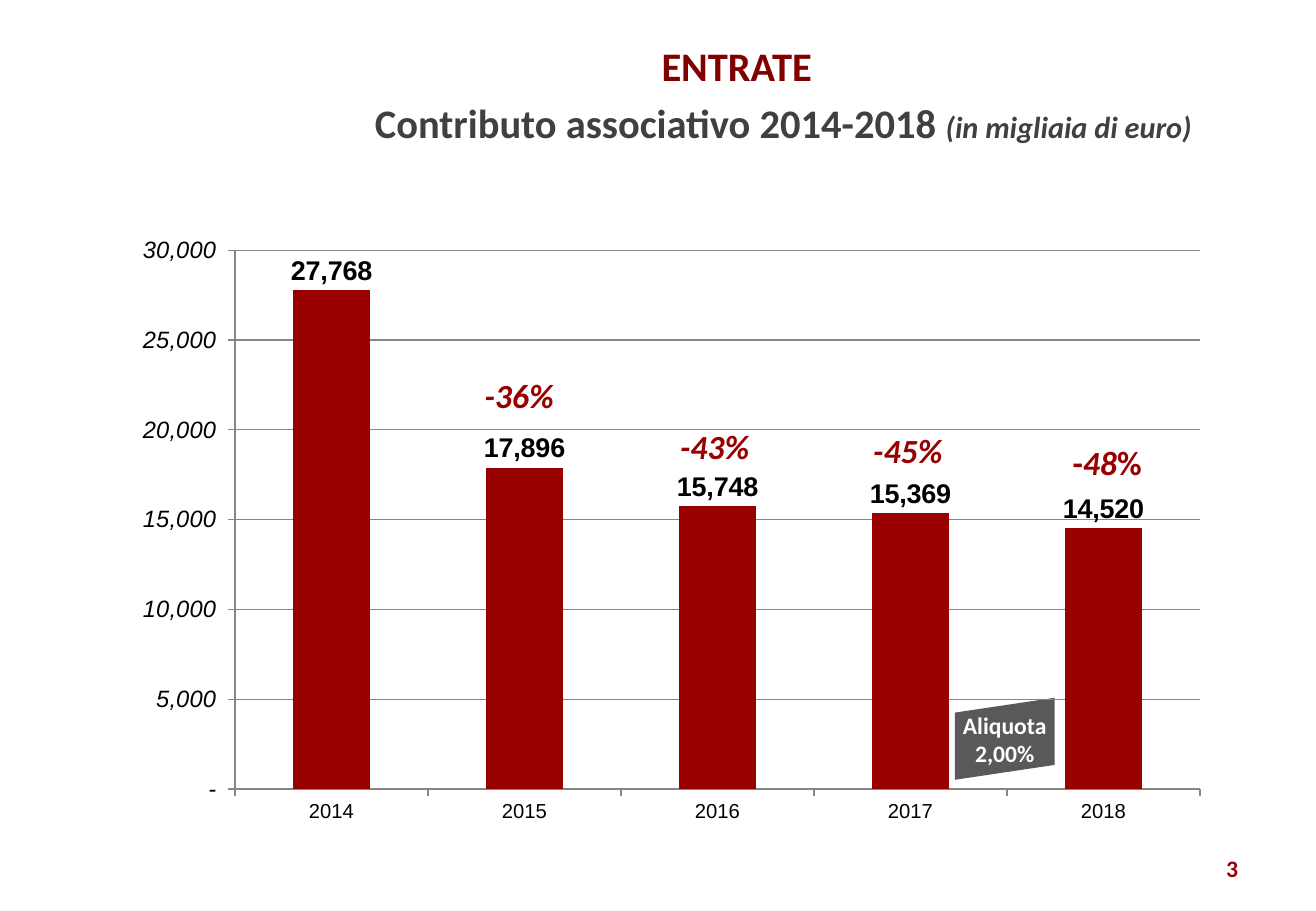
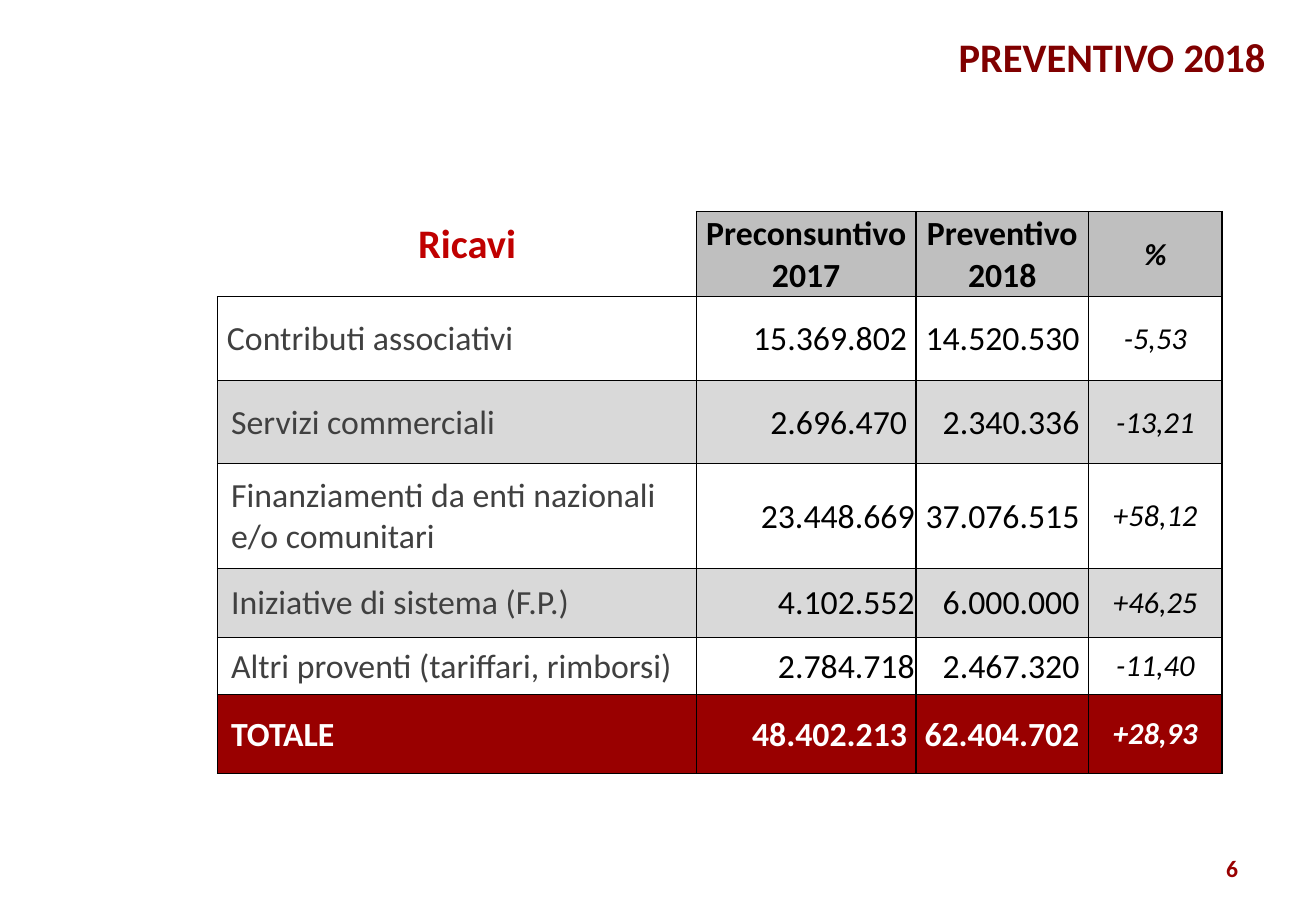
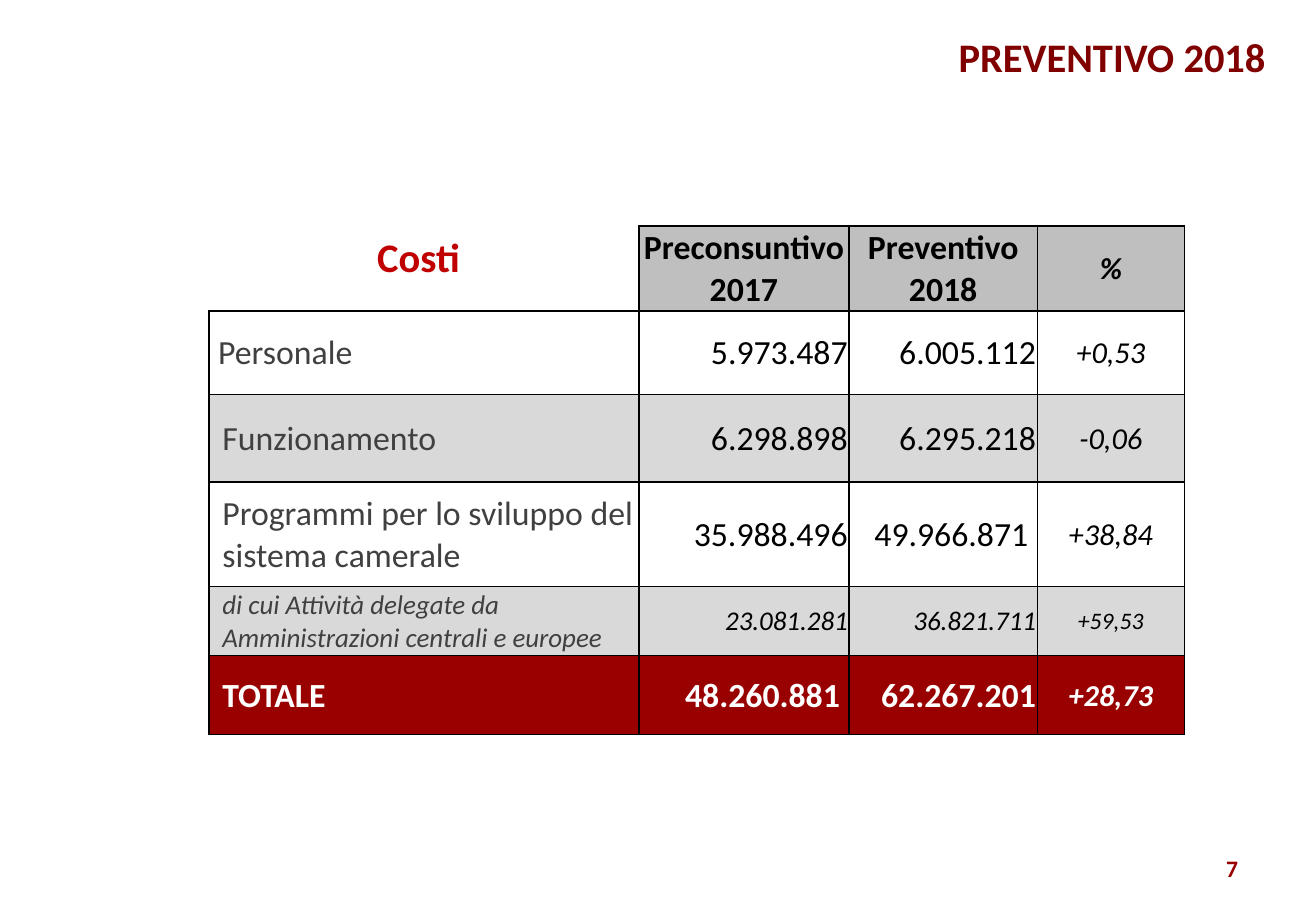
from lxml import etree
from pptx import Presentation
from pptx.chart import data as cd
from pptx.dml.color import RGBColor
from pptx.enum import chart as ch, text as tx
from pptx.oxml import ns
from pptx.util import Pt

DARK_RED = RGBColor(0x80, 0x00, 0x00)
RED = RGBColor(0x99, 0x00, 0x00)
BRIGHT_RED = RGBColor(0xC0, 0x00, 0x00)
BLACK = RGBColor(0x00, 0x00, 0x00)
WHITE = RGBColor(0xFF, 0xFF, 0xFF)
TEXT_GREY = RGBColor(0x40, 0x40, 0x40)
BADGE_GREY = RGBColor(0x59, 0x59, 0x59)
GRID_GREY = RGBColor(0x86, 0x86, 0x86)
HEAD_GREY = RGBColor(0xBF, 0xBF, 0xBF)
BAND_GREY = RGBColor(0xD9, 0xD9, 0xD9)

LEFT, CENTER, RIGHT = tx.PP_ALIGN.LEFT, tx.PP_ALIGN.CENTER, tx.PP_ALIGN.RIGHT
HEADS = ("", "Preconsuntivo 2017", "Preventivo 2018", "%")

REVENUE = [
    ("Contributi associativi", "15.369.802 ", "14.520.530 ", "-5,53"),
    ("Servizi commerciali", "2.696.470 ", "2.340.336 ", "-13,21"),
    ("Finanziamenti da enti nazionali e/o comunitari",
     "23.448.669", "37.076.515 ", "+58,12"),
    ("Iniziative di sistema (F.P.)", "4.102.552", "6.000.000 ", "+46,25"),
    ("Altri proventi (tariffari, rimborsi)",
     "2.784.718", "2.467.320 ", "-11,40"),
    ("TOTALE", "48.402.213 ", "62.404.702 ", "+28,93"),
]
COSTS = [
    ("Personale", "5.973.487", "6.005.112", "+0,53"),
    ("Funzionamento", "6.298.898", "6.295.218", "-0,06"),
    ("Programmi per lo sviluppo del sistema camerale",
     "35.988.496", "49.966.871 ", "+38,84"),
    ("di cui Attività delegate da Amministrazioni centrali e europee",
     "23.081.281", "36.821.711", "+59,53"),
    ("TOTALE", "48.260.881 ", "62.267.201", "+28,73"),
]


def style(font, size, color, bold=False, italic=False, name="Calibri"):
    font.name = name
    font.size = Pt(size)
    font.bold = bold
    font.italic = italic
    font.color.rgb = color


def add_text(s, box, runs, align=LEFT, anchor=tx.MSO_ANCHOR.TOP):
    tf = s.shapes.add_textbox(*map(Pt, box)).text_frame
    tf.word_wrap = True
    tf.vertical_anchor = anchor
    p = tf.paragraphs[0]
    p.alignment = align
    for words, size, color, italic in runs:
        r = p.add_run()
        r.text = words
        style(r.font, size, color, True, italic)


def add_slide(prs, title, box, number):
    s = prs.slides.add_slide(prs.slide_layouts[5])
    sp = s.shapes.title
    sp.left, sp.top, sp.width, sp.height = map(Pt, box)
    tf = sp.text_frame
    tf.text = title
    tf.word_wrap = False
    tf.auto_size = tx.MSO_AUTO_SIZE.NONE
    tf.vertical_anchor = tx.MSO_ANCHOR.TOP
    tf.paragraphs[0].alignment = CENTER
    style(tf.paragraphs[0].runs[0].font, 24, DARK_RED, True)
    add_text(s, (558.7, 500.4, 182.2, 28.8), [(number, 14, RED, False)],
             RIGHT, tx.MSO_ANCHOR.MIDDLE)
    return s


def add_badge(s, x, y, w, h, slant):
    fb = s.shapes.build_freeform(Pt(x), Pt(y + slant))
    fb.add_line_segments([(Pt(x + w), Pt(y)), (Pt(x + w), Pt(y + h - slant)),
                          (Pt(x), Pt(y + h))])
    sp = fb.convert_to_shape()
    sp.shadow.inherit = False
    sp.fill.solid()
    sp.fill.fore_color.rgb = BADGE_GREY
    sp.line.fill.background()
    tf = sp.text_frame
    tf.margin_left = tf.margin_right = 0
    tf.vertical_anchor = tx.MSO_ANCHOR.MIDDLE
    tf.text = "Aliquota\n2,00%"
    for p in tf.paragraphs:
        p.alignment = CENTER
        style(p.runs[0].font, 14, WHITE, True)


def set_plot_layout(chart, **fractions):
    plot_area = chart._chartSpace.chart.plotArea
    for old in plot_area.findall(ns.qn("c:layout")):
        plot_area.remove(old)
    layout = etree.Element(ns.qn("c:layout"))
    manual = etree.SubElement(layout, ns.qn("c:manualLayout"))
    settings = {"layoutTarget": "inner", "xMode": "edge", "yMode": "edge"}
    for tag, val in {**settings, **fractions}.items():
        etree.SubElement(manual, ns.qn("c:" + tag)).set("val", str(val))
    plot_area.insert(0, layout)


def add_column_chart(s, box):
    data = cd.CategoryChartData()
    data.categories = ["2014", "2015", "2016", "2017", "2018"]
    data.add_series("Series 1", (27768, 17896, 15748, 15369, 14520))
    chart = s.shapes.add_chart(ch.XL_CHART_TYPE.COLUMN_CLUSTERED,
                               *map(Pt, box), data).chart
    chart.has_legend = False
    chart.has_title = False
    style(chart.font, 10, BLACK, name="Arial")
    set_plot_layout(chart, x=0.11, y=0.04, w=0.87, h=0.88)

    plot = chart.plots[0]
    plot.gap_width = 150
    plot.vary_by_categories = False
    fill = plot.series[0].format.fill
    fill.solid()
    fill.fore_color.rgb = RED
    plot.has_data_labels = True
    labels = plot.data_labels
    labels.show_value = True
    labels.number_format = "#,##0"
    labels.number_format_is_linked = False
    labels.position = ch.XL_LABEL_POSITION.OUTSIDE_END
    style(labels.font, 16, BLACK, True, name="Arial")

    val, cat = chart.value_axis, chart.category_axis
    val.minimum_scale, val.maximum_scale, val.major_unit = 0, 30000, 5000
    val.tick_labels.number_format = (
        '_(* #,##0_);_(* \\(#,##0\\);_(* "-"_);_(@_)')
    val.tick_labels.number_format_is_linked = False
    style(val.tick_labels.font, 14, BLACK, italic=True, name="Arial")
    style(cat.tick_labels.font, 12, BLACK, name="Arial")
    for axis in (val, cat):
        axis.major_tick_mark = ch.XL_TICK_MARK.OUTSIDE
    for lined in (val, cat, val.major_gridlines):
        lined.format.line.color.rgb = GRID_GREY
        lined.format.line.width = Pt(0.75)


def set_borders(cell, sides):
    props = cell._tc.get_or_add_tcPr()
    for i, side in enumerate(sides):
        ln = etree.Element(ns.qn("a:ln" + side), w=str(Pt(1)))
        solid = etree.SubElement(ln, ns.qn("a:solidFill"))
        etree.SubElement(solid, ns.qn("a:srgbClr")).set("val", str(BLACK))
        props.insert(i, ln)


def fill_cell(cell, words, row, col, last):
    head, total = row == 0, row == last
    detail = words.startswith("di cui") or cell_is_detail(words)
    cell.margin_left = cell.margin_right = cell.margin_top = Pt(0.72)
    cell.margin_bottom = 0
    cell.vertical_anchor = tx.MSO_ANCHOR.MIDDLE
    if col == 0:
        cell.margin_left = Pt(5.5 if row == 1 else 8)
    fill = HEAD_GREY if head else RED if total else BAND_GREY
    if (head and col == 0) or (row % 2 and not total):
        cell.fill.background()
    else:
        cell.fill.solid()
        cell.fill.fore_color.rgb = fill
    set_borders(cell, "RB" if head and col == 0 else "LRTB")
    if not words:
        return
    cell.text_frame.text = words
    p = cell.text_frame.paragraphs[0]
    p.alignment = CENTER if head else (LEFT, RIGHT, RIGHT, CENTER)[col]
    size = (18 if col == 3 else 20) - 4 * detail
    color = WHITE if total else BLACK if head or col else TEXT_GREY
    style(p.runs[0].font, size, color, head or total, col == 3 or detail)


def cell_is_detail(words):
    return any(words in row for row in COSTS if row[0].startswith("di cui"))


def add_budget_table(s, x, y, cols, heights, heading, heading_dx, rows):
    tbl = s.shapes.add_table(len(heights), len(cols), Pt(x), Pt(y),
                             Pt(sum(cols)), Pt(sum(heights))).table
    tbl.first_row = tbl.horz_banding = False
    for column, width in zip(tbl.columns, cols):
        column.width = Pt(width)
    for row, height in zip(tbl.rows, heights):
        row.height = Pt(height)
    for i, values in enumerate([HEADS] + rows):
        for j, words in enumerate(values):
            fill_cell(tbl.cell(i, j), words, i, j, len(rows))
    add_text(s, (x + heading_dx, y, 215.3, 37.4),
             [(heading, 24, BRIGHT_RED, False)], CENTER)


def contribution_slide(prs):
    s = add_slide(prs, "ENTRATE", (384.5, 20.9, 104.4, 36), "3")
    add_text(s, (187.2, 54.7, 554.4, 37.4),
             [("Contributo associativo 2014-2018 ", 24, TEXT_GREY, False),
              ("(in migliaia di euro)", 18, TEXT_GREY, True)], CENTER)
    add_badge(s, 566, 413.6, 59.2, 48.6, 8.8)
    add_column_chart(s, (67, 133.9, 657.4, 362.9))
    for x, y, words in ((280.1, 218.9, "-36%"), (396, 249.1, "-43%"),
                        (510.5, 251.3, "-45%")):
        add_text(s, (x, y, 64.1, 31.7), [(words, 20, RED, True)])
    add_text(s, (628.6, 258.5, 64.1, 31.7),
             [("-", 20, RED, False), ("48", 20, RED, True),
              ("%", 20, RED, False)])


def budget_slide(prs, number, *table):
    s = add_slide(prs, "PREVENTIVO 2018", (560.2, 15.1, 198, 36), number)
    add_budget_table(s, *table)


def main():
    prs = Presentation()
    prs.slide_width, prs.slide_height = Pt(780), Pt(540)
    contribution_slide(prs)
    budget_slide(prs, "6", 129, 125.5, (283.7, 130.3, 102.2, 79.2),
                 (50.4, 49.8, 49.2, 62, 41, 33.8, 46.8),
                 "Ricavi", 40.2, REVENUE)
    budget_slide(prs, "7", 123.8, 133.9, (254.9, 124.6, 111.6, 87.1),
                 (50.4, 49.7, 51.8, 61.9, 41, 46.8),
                 "Costi", 16.6, COSTS)
    prs.save("out.pptx")


if __name__ == "__main__":
    main()
